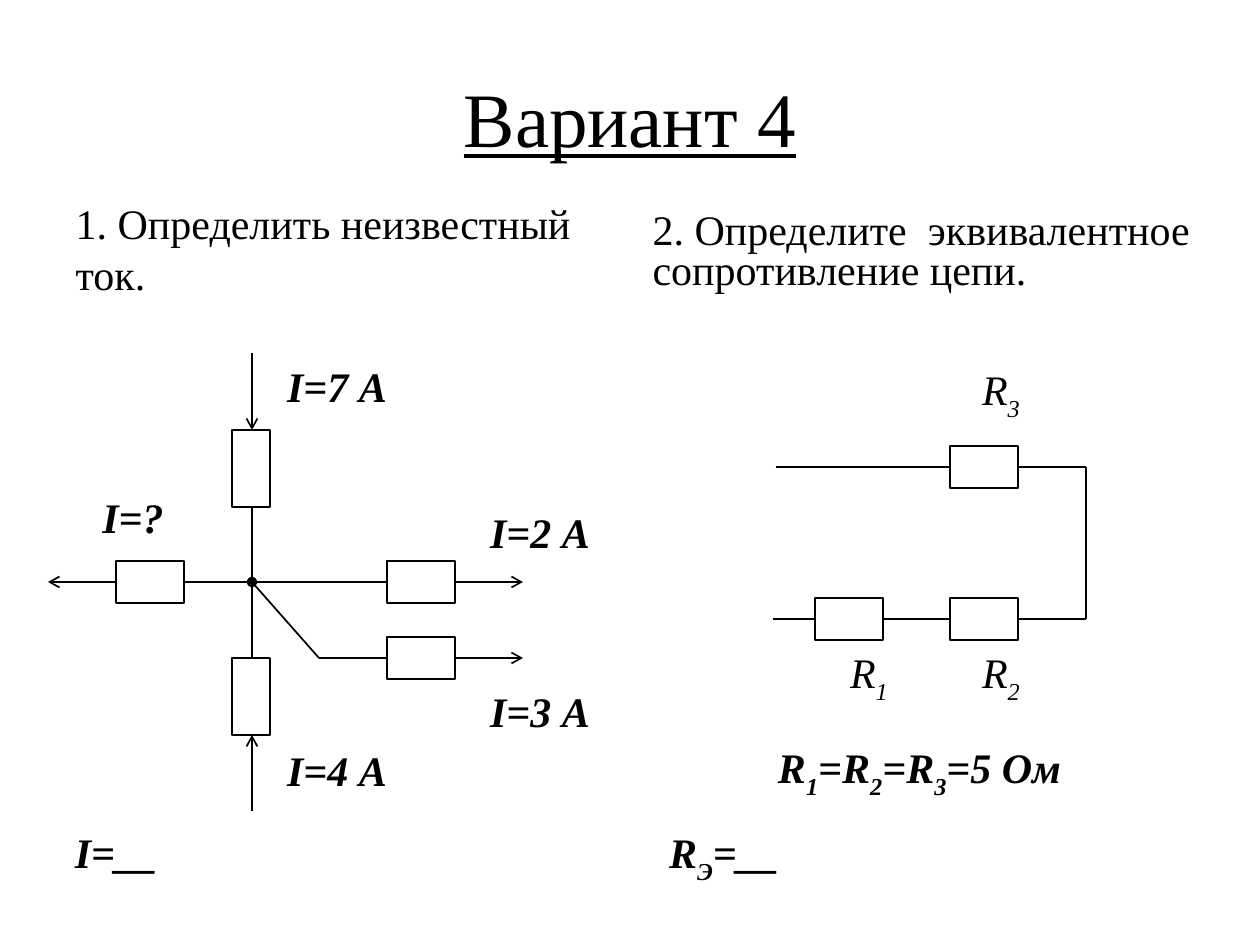
from pptx import Presentation
from pptx import util as u
from pptx.dml.color import RGBColor
from pptx.enum import shapes, text
from pptx.oxml.ns import qn
from lxml import etree

PX = 7257  # EMU per px, 126 px to the inch
FONT = "Times New Roman"
BLACK, WHITE = "000000", "FFFFFF"

# Headings: text, (left, top, width, height), format
TITLE = ("Вариант 4", (63, 38, 1134, 157))
TASKS = [
    ("1. Определить неизвестный ток.", (63, 212, 557, 93), 1.0),
    ("2. Определите  эквивалентное сопротивление цепи.", (640, 212, 581, 88), 0.8),
]

# Resistors: left, top of the horizontal and of the upright ones
LONG, SHORT, TALL, NARROW = 68, 42, 77, 38
FLAT_RESISTORS = [(116, 561), (387, 561), (387, 637),
                  (950, 446), (815, 598), (950, 598)]
UPRIGHT_RESISTORS = [(232, 430), (232, 658)]

# Wires: from x, y to x, y, and the end mark
NODE = (252, 582)
WIRES = [
    ((252, 353), (252, 430), "arrow"),
    ((252, 507), NODE, None),
    (NODE, (252, 658), None),
    ((252, 811), (252, 735), "arrow"),
    ((116, 582), (48, 582), "arrow"),
    ((184, 582), NODE, None),
    (NODE, (387, 582), None),
    ((455, 582), (523, 582), "arrow"),
    ((319, 658), NODE, "oval"),
    ((319, 658), (387, 658), None),
    ((455, 658), (523, 658), "arrow"),
    ((776, 467), (950, 467), None),
    ((1018, 467), (1086, 467), None),
    ((1086, 467), (1086, 619), None),
    ((773, 619), (815, 619), None),
    ((883, 619), (950, 619), None),
    ((1018, 619), (1086, 619), None),
]

# Labels: parts (every second one is a subscript), left, top, width, bold
LABELS = [
    (["I=7 А"], 252, 354, 170, True),
    (["I=?"], 48, 485, 170, True),
    (["I=2 А"], 455, 500, 170, True),
    (["I=3 А"], 455, 679, 170, True),
    (["I=4 А"], 252, 738, 170, True),
    (["I=__"], 31, 820, 170, True),
    (["R", "3"], 916, 357, 170, False),
    (["R", "1"], 784, 640, 170, False),
    (["R", "2"], 916, 640, 170, False),
    (["R", "1", "=R", "2", "=R", "3", "=5 Ом"], 733, 735, 373, True),
    (["R", "Э", "=__"], 639, 820, 170, True),
]
LABEL_HEIGHT = 73


def color(value):
    return RGBColor.from_string(value)


def px(*lengths):
    return [length * PX for length in lengths]


def write(box, parts, size=24, bold=False, italic=False, underline=False,
          align=text.PP_ALIGN.LEFT, anchor=text.MSO_ANCHOR.TOP, spacing=None):
    frame = box.text_frame
    frame.word_wrap = True
    frame.vertical_anchor = anchor
    para = frame.paragraphs[0]
    para.alignment = align
    para.space_before = u.Pt(0)
    if spacing:
        para.line_spacing = spacing
    for index, part in enumerate(parts):
        span = para.add_run()
        span.text = part
        font = span.font
        font.name, font.size = FONT, u.Pt(size)
        font.bold, font.italic, font.underline = bold, italic, underline
        font.color.rgb = color(BLACK)
        if index % 2:
            span._r.get_or_add_rPr().set("baseline", "-30000")


def place(box, area):
    box.left, box.top, box.width, box.height = px(*area)


def add_wire(page, start, end, mark):
    wire = page.shapes.add_connector(shapes.MSO_CONNECTOR.STRAIGHT,
                                     *px(*start, *end))
    wire.line.color.rgb = color(BLACK)
    wire.line.width = u.Pt(1)
    properties = wire._element.spPr
    if mark:
        etree.SubElement(properties.get_or_add_ln(), qn("a:tailEnd"), type=mark)
    etree.SubElement(properties, qn("a:effectLst"))


def add_resistor(page, left, top, width, height):
    box = page.shapes.add_shape(shapes.MSO_SHAPE.RECTANGLE,
                                *px(left, top, width, height))
    box.shadow.inherit = False
    box.fill.solid()
    box.fill.fore_color.rgb = color(WHITE)
    box.line.color.rgb = color(BLACK)
    box.line.width = u.Pt(1)


def main():
    deck = Presentation()
    deck.slide_width, deck.slide_height = u.Inches(10), u.Inches(7.5)
    page = deck.slides.add_slide(deck.slide_layouts.get_by_name("Comparison"))
    title, left_task, left_content, right_task, right_content = page.placeholders
    for unused in (left_content, right_content):
        unused._element.getparent().remove(unused._element)

    # Title and the two tasks
    words, area = TITLE
    place(title, area)
    write(title, [words], size=44, underline=True,
          align=text.PP_ALIGN.CENTER, anchor=text.MSO_ANCHOR.MIDDLE)
    for box, (words, area, spacing) in zip((left_task, right_task), TASKS):
        place(box, area)
        write(box, [words], anchor=text.MSO_ANCHOR.BOTTOM, spacing=spacing)

    # Circuits
    for wire in WIRES:
        add_wire(page, *wire)
    for left, top in FLAT_RESISTORS:
        add_resistor(page, left, top, LONG, SHORT)
    for left, top in UPRIGHT_RESISTORS:
        add_resistor(page, left, top, NARROW, TALL)

    # Labels
    for parts, left, top, width, bold in LABELS:
        box = page.shapes.add_textbox(*px(left, top, width, LABEL_HEIGHT))
        write(box, parts, bold=bold, italic=True, align=text.PP_ALIGN.CENTER)

    deck.save("out.pptx")


if __name__ == "__main__":
    main()
